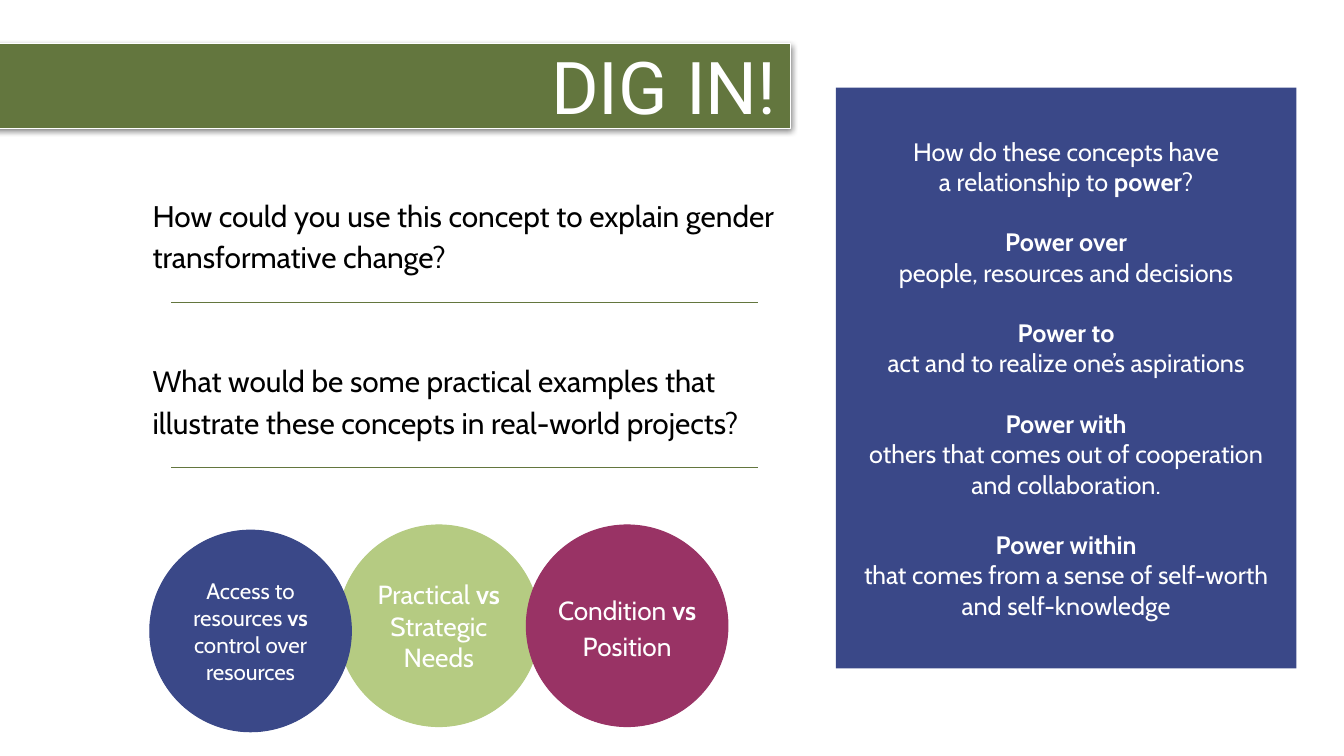
"""Build the "DIG IN!" discussion slide on gender concepts and power."""
from lxml.etree import SubElement
from pptx import Presentation
from pptx.dml.color import RGBColor
from pptx.enum.shapes import MSO_CONNECTOR, MSO_SHAPE
from pptx.enum.text import MSO_ANCHOR, MSO_AUTO_SIZE, PP_ALIGN
from pptx.oxml import parse_xml
from pptx.oxml.ns import nsdecls, qn
from pptx.util import Pt

COLORS = {
    "white": "FFFFFF",
    "black": "000000",
    "olive": "63763E",
    "blue": "3A4888",
    "lime": "B5CB82",
    "plum": "993365",
}
RGB = {name: RGBColor.from_string(value) for name, value in COLORS.items()}


def set_frame(shape, margin, anchor):
    frame = shape.text_frame
    frame.word_wrap = True
    frame.auto_size = MSO_AUTO_SIZE.NONE
    frame.vertical_anchor = anchor
    frame.margin_left = frame.margin_right = Pt(margin)
    frame.margin_top = frame.margin_bottom = Pt(margin)
    return frame


def write(paragraph, text, size, color="white", align=PP_ALIGN.CENTER, font="Cabin"):
    """Write text into a paragraph; parts between asterisks are bold."""
    paragraph.alignment = align
    paragraph.font.name = font
    paragraph.font.size = Pt(size)
    paragraph.font.color.rgb = RGB[color]
    for index, part in enumerate(text.split("*")):
        if part:
            run = paragraph.add_run()
            run.text = part
            if index % 2:
                run.font.bold = True


presentation = Presentation()
presentation.slide_width, presentation.slide_height = Pt(960), Pt(540)
slide = presentation.slides.add_slide(presentation.slide_layouts[5])
shapes = slide.shapes

title = shapes.title
title.left, title.top, title.width, title.height = Pt(-7.2), Pt(31), Pt(571.7), Pt(60.5)
title.fill.solid()
title.fill.fore_color.rgb = RGB["olive"]
title.line.color.rgb = RGB["white"]
title.line.width = Pt(0.75)
title_frame = set_frame(title, 9.6, MSO_ANCHOR.MIDDLE)
write(title_frame.paragraphs[0], "DIG IN!", 52, align=PP_ALIGN.RIGHT, font="Roboto")
title._element.spPr.append(parse_xml(
    f'<a:effectLst {nsdecls("a")}>'
    f'<a:outerShdw blurRad="{Pt(4.5)}" dist="{Pt(1.5)}" dir="5400000" algn="bl" rotWithShape="0">'
    f'<a:srgbClr val="{COLORS["black"]}"><a:alpha val="47000"/></a:srgbClr>'
    '</a:outerShdw></a:effectLst>'
))

questions = [
    ("How could you use this concept to explain gender transformative change?", 128, 471.6, 81.4),
    ("What would be some practical examples that illustrate these concepts in real-world projects?",
     246, 489, 112.3),
]
for text, top, width, height in questions:
    question = shapes.add_textbox(Pt(99.4), Pt(top), Pt(width), Pt(height))
    paragraph = set_frame(question, 9.6, MSO_ANCHOR.TOP).paragraphs[0]
    paragraph.line_spacing = 1.15
    write(paragraph, text, 21.3, "black", PP_ALIGN.LEFT)

    rule_y = Pt(top + 88)
    rule = shapes.add_connector(MSO_CONNECTOR.STRAIGHT, Pt(122.4), rule_y, Pt(541.4), rule_y)
    rule.line.color.rgb = RGB["olive"]
    rule.line.width = Pt(0.75)
    SubElement(rule._element.spPr, qn("a:effectLst"))

panel = shapes.add_shape(MSO_SHAPE.RECTANGLE, Pt(597), Pt(62.7), Pt(329), Pt(414.7))
panel.shadow.inherit = False
panel.fill.solid()
panel.fill.fore_color.rgb = RGB["blue"]
panel.line.fill.background()
panel_frame = set_frame(panel, 9.6, MSO_ANCHOR.MIDDLE)
panel_lines = [
    "How do these concepts have",
    "a relationship to *power*?",
    "*Power over*",
    "people, resources and decisions",
    "*Power to*",
    "act and to realize one’s aspirations",
    "*Power with*",
    "others that comes out of cooperation and collaboration.",
    "*Power within*",
    "that comes from a sense of self-worth and self-knowledge",
]
for index, text in enumerate(panel_lines):
    paragraph = panel_frame.add_paragraph() if index else panel_frame.paragraphs[0]
    if text.startswith("*"):
        paragraph.space_before = Pt(21.7)
    write(paragraph, text, 18)

circles = [
    ("Practical *vs* Strategic Needs", "lime", 1, 375, 18.7, 1),
    ("Condition *vs* Position", "plum", 2, 375, 18.7, 1.15),
    ("Access to resources *vs* control over resources", "blue", 0, 378.7, 16, 1),
]
for text, color, column, top, size, spacing in circles:
    circle = shapes.add_shape(
        MSO_SHAPE.OVAL, Pt(107 + 134.5 * column), Pt(top), Pt(144), Pt(144))
    circle.shadow.inherit = False
    circle.fill.solid()
    circle.fill.fore_color.rgb = RGB[color]
    circle.line.color.rgb = RGB[color]
    circle.line.width = Pt(0.75)
    paragraph = set_frame(circle, 0, MSO_ANCHOR.MIDDLE).paragraphs[0]
    paragraph.line_spacing = spacing
    write(paragraph, text, size)

presentation.save("out.pptx")
